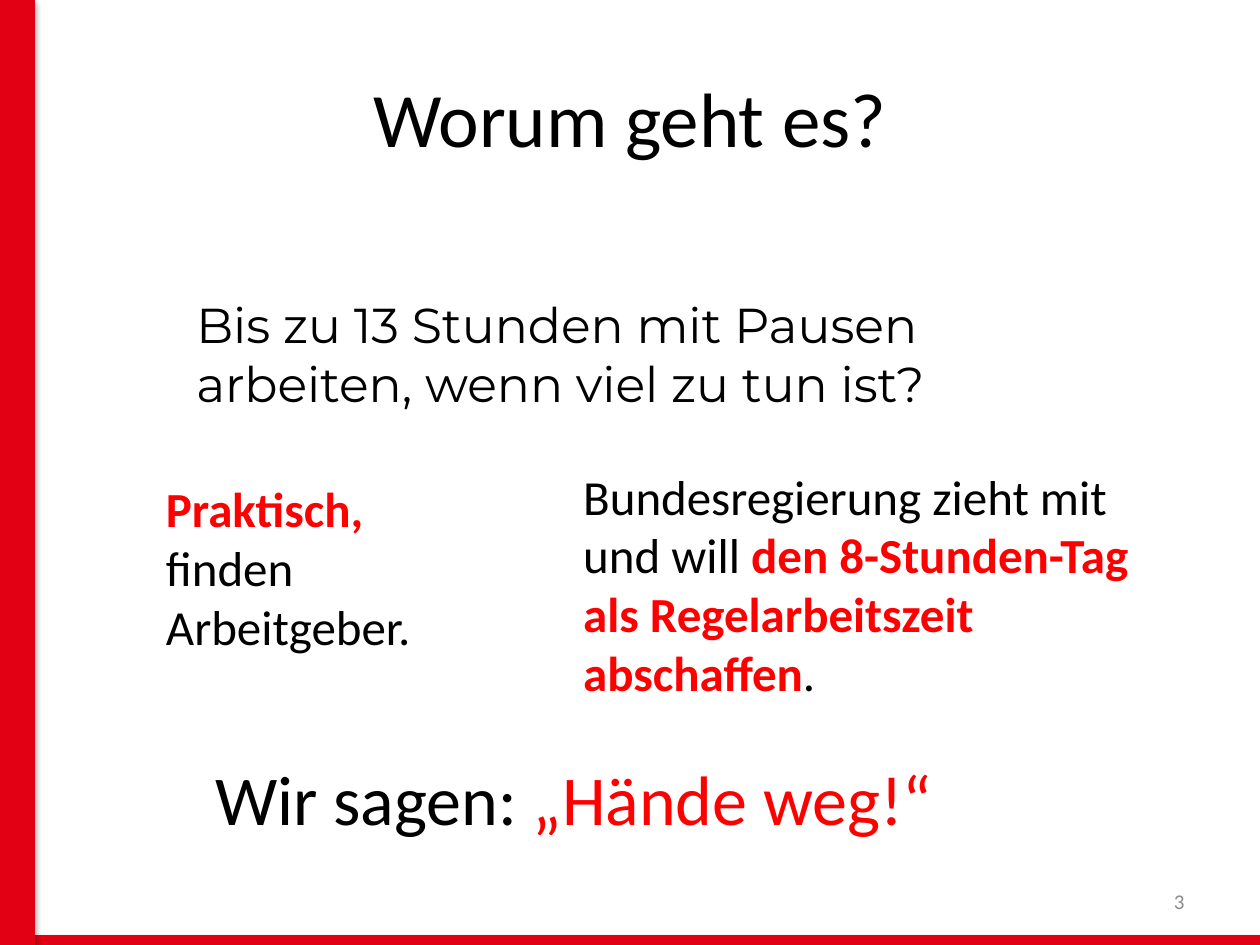
from dataclasses import dataclass

from lxml import etree
from pptx import Presentation
from pptx.dml.color import RGBColor
from pptx.enum.shapes import MSO_SHAPE as Shape
from pptx.enum.text import MSO_ANCHOR as Anchor
from pptx.enum.text import MSO_AUTO_SIZE as AutoSize
from pptx.enum.text import PP_ALIGN as Align
from pptx.oxml.ns import qn
from pptx.util import Pt

PAGE_WIDTH, PAGE_HEIGHT = 720, 540
SIDE_BAR, BOTTOM_BAR = 20, 5.6


@dataclass(frozen=True)
class Theme:
    text: str = "000000"
    accent: str = "FF0000"
    bar: str = "E20015"
    muted: str = "8C8C8C"
    shadow: str = "000000"
    font: str = "Calibri"
    quote_font: str = "Montserrat"
    title_size: float = 44
    slogan_size: float = 40
    body_size: float = 28
    number_size: float = 12


class SlideBuilder:
    def __init__(self, slide, theme):
        self.slide = slide
        self.theme = theme

    def place(self, shape, left, top, width, height):
        shape.left, shape.top = Pt(left), Pt(top)
        shape.width, shape.height = Pt(width), Pt(height)

    def fill_frame(self, frame, runs, size, font, align, anchor):
        """Fill the frame with one paragraph of (text, colour, bold) runs."""
        frame.word_wrap = True
        frame.vertical_anchor = anchor
        para = frame.paragraphs[0]
        para.alignment = align
        para.font.size = Pt(size)
        para.font.name = font
        for text, color, bold in runs:
            span = para.add_run()
            span.text = text
            span.font.bold = bold
            span.font.color.rgb = RGBColor.from_string(color)

    def title(self, text, *bounds):
        box = self.slide.shapes.title
        self.place(box, *bounds)
        self.fill_frame(box.text_frame, [(text, self.theme.text, False)],
                        self.theme.title_size, self.theme.font,
                        Align.CENTER, Anchor.MIDDLE)

    def text(self, runs, *bounds, size=None, font=None):
        box = self.slide.shapes.add_textbox(*map(Pt, bounds))
        self.fill_frame(box.text_frame, runs, size or self.theme.body_size,
                        font or self.theme.font, Align.LEFT, Anchor.TOP)
        box.text_frame.auto_size = AutoSize.SHAPE_TO_FIT_TEXT

    def page_number(self, number, *bounds):
        box = self.slide.shapes.add_textbox(*map(Pt, bounds))
        self.fill_frame(box.text_frame, [(str(number), self.theme.muted, False)],
                        self.theme.number_size, self.theme.font,
                        Align.RIGHT, Anchor.MIDDLE)

    def bar(self, *bounds):
        bar = self.slide.shapes.add_shape(Shape.RECTANGLE, *map(Pt, bounds))
        bar.fill.solid()
        bar.fill.fore_color.rgb = RGBColor.from_string(self.theme.bar)
        bar.line.fill.background()
        self.drop_shadow(bar)

    def drop_shadow(self, shape):
        shape.shadow.inherit = False
        effects = shape.element.spPr.find(qn("a:effectLst"))
        shadow = etree.SubElement(
            effects, qn("a:outerShdw"), blurRad=str(Pt(3.1)),
            dist=str(Pt(1.8)), dir="5400000", rotWithShape="0")
        color = etree.SubElement(shadow, qn("a:srgbClr"), val=self.theme.shadow)
        etree.SubElement(color, qn("a:alpha"), val="35000")


def main():
    deck = Presentation()
    deck.slide_width, deck.slide_height = Pt(PAGE_WIDTH), Pt(PAGE_HEIGHT)
    theme = Theme()
    page = SlideBuilder(deck.slides.add_slide(deck.slide_layouts[5]), theme)

    def plain(text):
        return text, theme.text, False

    def strong(text):
        return text, theme.accent, True

    page.title("Worum geht es?", 36, 21.6, 648, 90)
    page.text([plain("Bis zu 13 Stunden mit Pausen arbeiten, wenn viel zu tun ist?")],
              105.1, 164.9, 532.8, 75, font=theme.quote_font)
    page.text([strong("Praktisch, "), plain("finden Arbeitgeber.")],
              87.8, 270, 158.4, 108.7)
    page.text([plain("Bundesregierung zieht mit und will "),
               strong("den 8-Stunden-Tag als Regelarbeitszeit abschaffen"),
               plain(".")],
              326.2, 262.8, 362.9, 143.3)
    page.text([plain("Wir sagen: "), ("„Hände weg!“", theme.accent, False)],
              115.9, 428.4, 493.9, 55.4, size=theme.slogan_size)
    page.page_number(3, 516, 500.5, 168, 28.8)
    page.bar(0, PAGE_HEIGHT - BOTTOM_BAR, PAGE_WIDTH, BOTTOM_BAR)
    page.bar(0, 0, SIDE_BAR, PAGE_HEIGHT)

    deck.save("out.pptx")


if __name__ == "__main__":
    main()
